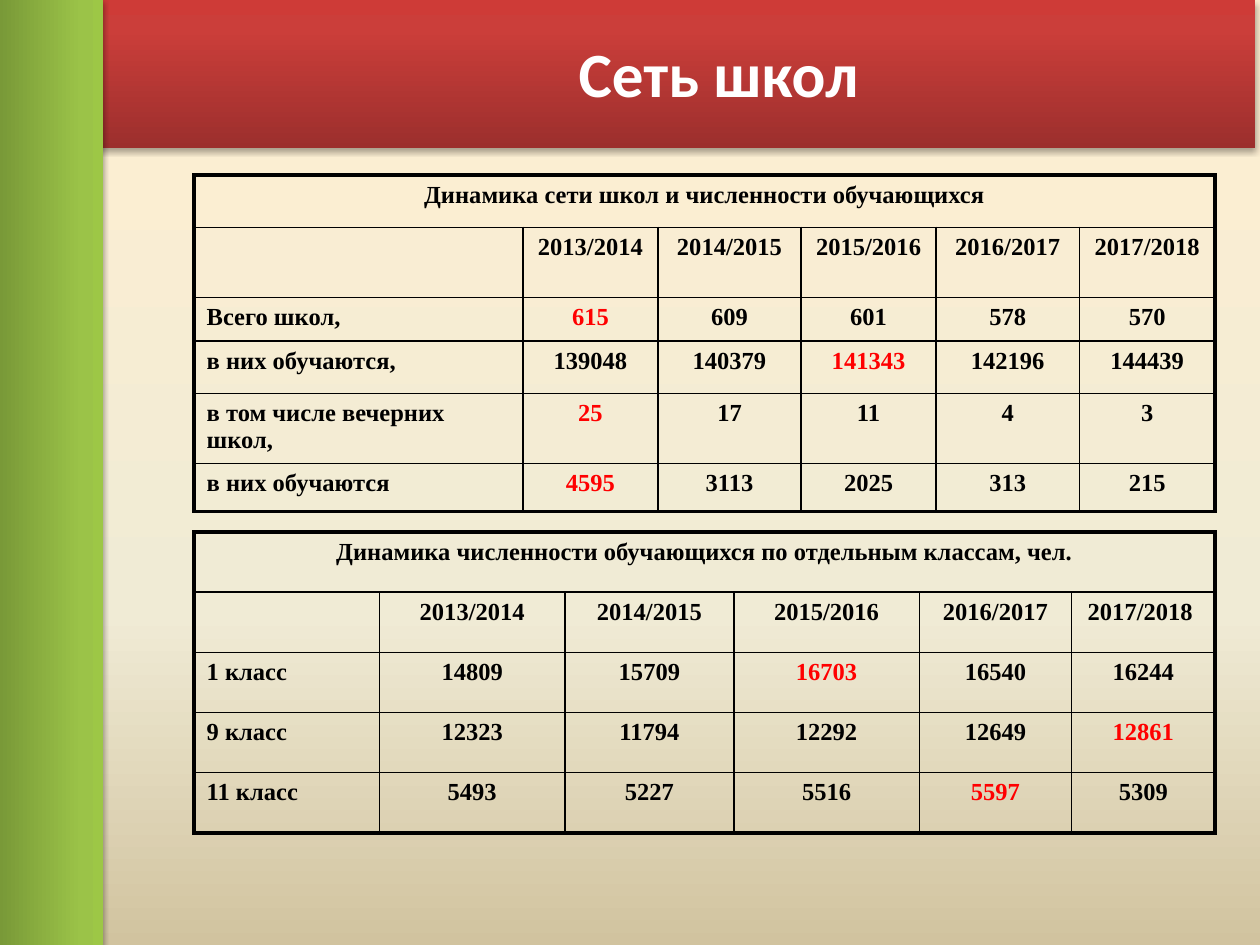
"""Build the slide on the school network with two tables of yearly figures."""
from dataclasses import dataclass

import lxml.etree
import pptx
import pptx.dml.color
import pptx.enum.shapes
import pptx.enum.text
import pptx.oxml.ns
import pptx.util

Pt = pptx.util.Pt
RGBColor = pptx.dml.color.RGBColor
qn = pptx.oxml.ns.qn
Align = pptx.enum.text.PP_ALIGN

BLACK = RGBColor(0x00, 0x00, 0x00)
WHITE = RGBColor(0xFF, 0xFF, 0xFF)
RED = RGBColor(0xFF, 0x00, 0x00)
PAPER = ((0, RGBColor(0xFF, 0xEF, 0xD1)), (65, RGBColor(0xF0, 0xEB, 0xD5)),
         (100, RGBColor(0xD1, 0xC3, 0x9F)))
CRIMSON = ((0, RGBColor(0x9C, 0x2F, 0x2D)), (80, RGBColor(0xCB, 0x3E, 0x3A)),
           (100, RGBColor(0xCE, 0x3B, 0x37)))
GREEN = ((0, RGBColor(0x77, 0x97, 0x37)), (80, RGBColor(0x9B, 0xC3, 0x48)),
         (100, RGBColor(0x9D, 0xC7, 0x46)))

TABLE_LEFT = 110.9
OUTER_LINE = 2.25
INNER_LINE = 1
YEARS = ("", "2013/2014", "2014/2015", "2015/2016", "2016/2017", "2017/2018 ")


@dataclass
class Band:
    left: float
    top: float
    width: float
    height: float
    rotation: float
    stops: tuple


@dataclass
class Statistics:
    top: float
    heading: str
    columns: tuple
    heights: tuple
    rows: tuple
    peaks: tuple


BANDS = (
    Band(-2.9, 0, 720, 84.6, 0, CRIMSON),
    Band(-241.9, 239, 540, 62, 90, GREEN),
)
TABLES = (
    Statistics(
        100.1, "Динамика сети школ и численности обучающихся",
        (188, 77, 82, 77, 82, 77.5), (29.8, 40, 25.1, 29.8, 40, 27.5),
        (("Всего школ,", "615", "609", "601", "578", "570"),
         ("в них обучаются,", "139048", "140379", "141343", "142196", "144439"),
         ("в том числе вечерних школ,", "25", "17", "11", "4", "3"),
         ("в них обучаются", "4595", "3113", "2025", "313", "215")),
        ("615", "141343", "25", "4595"),
    ),
    Statistics(
        304, "Динамика численности обучающихся по отдельным классам, чел.",
        (106, 106, 96.5, 106, 87, 82), (34.4,) * 5,
        (("1 класс", "14809", "15709", "16703", "16540", "16244"),
         ("9 класс", "12323", "11794", "12292", "12649", "12861"),
         ("11 класс", "5493", "5227", "5516", "5597", "5309")),
        ("16703", "12861", "5597"),
    ),
)


def set_gradient(fill, element, stops: tuple, angle: float) -> None:
    fill.gradient()
    fill.gradient_angle = angle
    stop_list = element.find(".//" + qn("a:gsLst"))
    for old_stop in list(stop_list):
        stop_list.remove(old_stop)
    for percent, color in stops:
        stop = lxml.etree.SubElement(stop_list, qn("a:gs"), pos=str(percent * 1000))
        lxml.etree.SubElement(stop, qn("a:srgbClr"), val=str(color))


def add_band(page, band: Band) -> None:
    shape = page.shapes.add_shape(
        pptx.enum.shapes.MSO_SHAPE.RECTANGLE,
        Pt(band.left), Pt(band.top), Pt(band.width), Pt(band.height))
    shape.rotation = band.rotation
    shape.line.fill.background()
    set_gradient(shape.fill, shape.element, band.stops, 90)
    shape.shadow.inherit = False
    effects = shape.element.spPr.find(qn("a:effectLst"))
    shadow = lxml.etree.SubElement(
        effects, qn("a:outerShdw"), blurRad=str(Pt(3.1)), dist=str(Pt(1.8)),
        dir="5400000", rotWithShape="0")
    color = lxml.etree.SubElement(shadow, qn("a:srgbClr"), val=str(BLACK))
    lxml.etree.SubElement(color, qn("a:alpha"), val="35000")


def set_borders(cell, outer_sides: dict[str, bool]) -> None:
    properties = cell._tc.get_or_add_tcPr()
    for side, is_outer in outer_sides.items():
        width = Pt(OUTER_LINE if is_outer else INNER_LINE)
        line = lxml.etree.SubElement(properties, qn("a:ln" + side), w=str(width))
        fill = lxml.etree.SubElement(line, qn("a:solidFill"))
        lxml.etree.SubElement(fill, qn("a:srgbClr"), val=str(BLACK))
    cell.fill.background()


def write_cell(cell, text: str, alignment, color) -> None:
    para = cell.text_frame.paragraphs[0]
    para.text = text
    para.alignment = alignment
    para.font.name = "Times New Roman"
    para.font.size = Pt(14)
    para.font.bold = True
    para.font.color.rgb = color


def add_statistics(page, data: Statistics) -> None:
    heading_row = (data.heading,) + ("",) * (len(data.columns) - 1)
    rows = (heading_row, YEARS) + data.rows
    last_row, last_column = len(rows) - 1, len(data.columns) - 1
    table = page.shapes.add_table(
        len(rows), len(data.columns), Pt(TABLE_LEFT), Pt(data.top),
        Pt(sum(data.columns)), Pt(sum(data.heights))).table
    table.first_row = table.horz_banding = False
    for column, width in zip(table.columns, data.columns):
        column.width = Pt(width)
    for row, height in zip(table.rows, data.heights):
        row.height = Pt(height)
    table.cell(0, 0).merge(table.cell(0, last_column))
    for i, texts in enumerate(rows):
        for j, text in enumerate(texts):
            cell = table.cell(i, j)
            is_label = i > 1 and j == 0
            write_cell(cell, text, Align.LEFT if is_label else Align.CENTER,
                       RED if text in data.peaks else BLACK)
            right_edge = j == last_column or i == 0
            set_borders(cell, {"L": j == 0, "R": right_edge,
                               "T": i == 0, "B": i == last_row})


def place_title(page, text: str) -> None:
    title = page.shapes.title
    title.left, title.top, title.width, title.height = (
        Pt(110.9), Pt(5.8), Pt(572.4), Pt(71.3))
    title.element.getparent().append(title.element)
    title.text_frame.vertical_anchor = pptx.enum.text.MSO_ANCHOR.MIDDLE
    para = title.text_frame.paragraphs[0]
    para.text = text
    para.alignment = Align.CENTER
    para._p.get_or_add_pPr().set("indent", str(Pt(35.3)))
    para.font.name = "Calibri"
    para.font.size = Pt(36)
    para.font.bold = True
    para.font.color.rgb = WHITE


def main() -> None:
    deck = pptx.Presentation()
    deck.slide_width, deck.slide_height = Pt(720), Pt(540)
    page = deck.slides.add_slide(deck.slide_layouts[5])
    set_gradient(page.background.fill, page.element, PAPER, 270)
    for data in TABLES:
        add_statistics(page, data)
    for band in BANDS:
        add_band(page, band)
    place_title(page, "Сеть школ ")
    deck.save("out.pptx")


if __name__ == "__main__":
    main()
